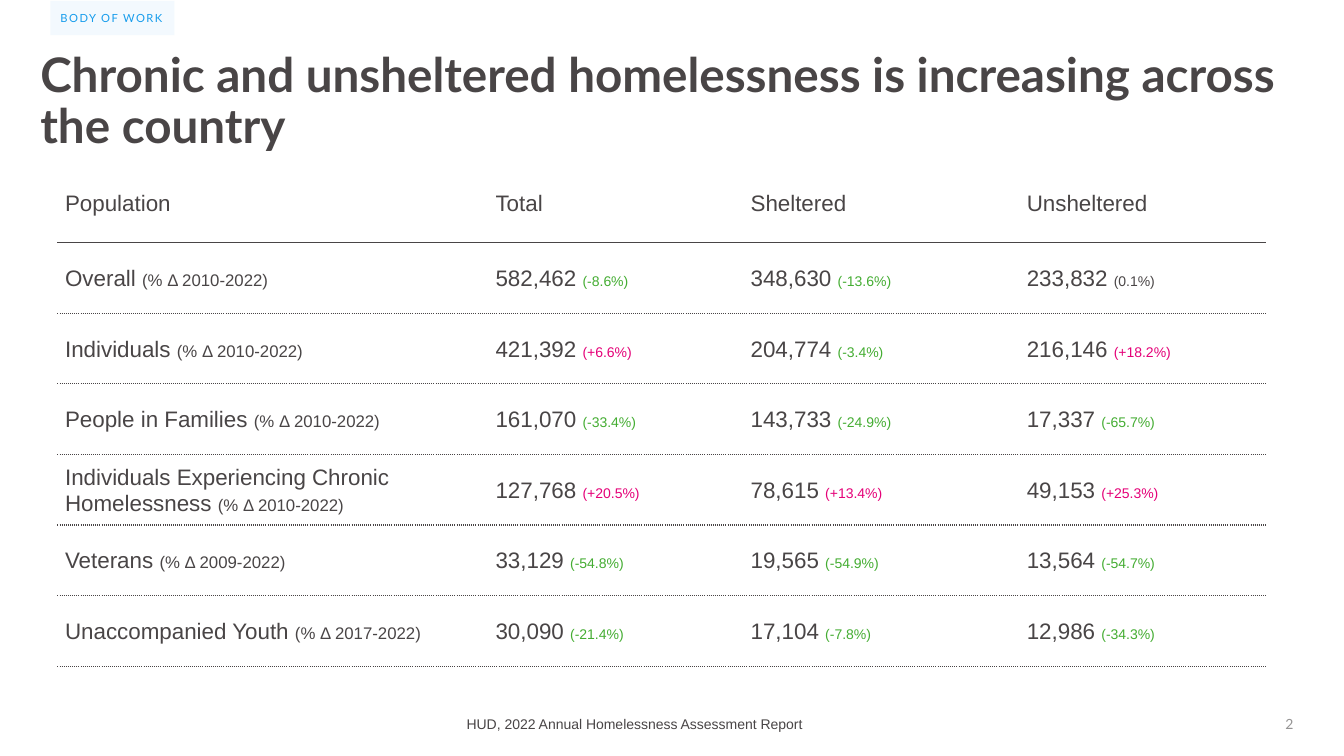
from dataclasses import dataclass
from lxml import etree
from pptx import Presentation, util as u
from pptx.dml.color import RGBColor
from pptx.enum import text as t
from pptx.oxml import ns


@dataclass(frozen=True)
class Theme:
    ink: str = "494546"
    gray: str = "959494"
    blue: str = "169CEC"
    good: str = "44AD32"
    bad: str = "E50178"
    white: str = "FFFFFF"
    head: str = "Lato"
    body: str = "Arial"
    title: int = 34
    cell: int = 16
    note: int = 12
    small: int = 10
    tag: int = 8


def child(node, name, **attrs):
    return etree.SubElement(node, ns.qn(name), attrs)


class Page:
    """Style and current slide; lengths are percent of the slide's size."""

    def __init__(self, deck, theme):
        self.wide, self.high = deck.slide_width, deck.slide_height
        self.theme = theme
        self.slide = deck.slides.add_slide(deck.slide_layouts[1])

    def x(self, share):
        return u.Emu(round(self.wide * share / 100))

    def y(self, share):
        return u.Emu(round(self.high * share / 100))

    def box(self, left, top, width, height):
        return self.x(left), self.y(top), self.x(width), self.y(height)

    def place(self, shape, area):
        shape.left, shape.top, shape.width, shape.height = self.box(*area)
        shape.text_frame.auto_size = t.MSO_AUTO_SIZE.NONE

    def inset(self, frame, side, edge):
        frame.margin_left = frame.margin_right = u.Inches(side)
        frame.margin_top = frame.margin_bottom = u.Inches(edge)

    def style(self, font, size, color, name):
        font.size, font.name = u.Pt(size), name
        font.color.rgb = RGBColor.from_string(color)

    def title(self, words, area):
        shape = self.slide.shapes.title
        self.place(shape, area)
        frame = shape.text_frame
        frame.text = words
        frame.vertical_anchor = t.MSO_ANCHOR.TOP
        self.inset(frame, 0, 0.05)
        para = frame.paragraphs[0]
        para.alignment, para.line_spacing = t.PP_ALIGN.LEFT, 0.9
        self.style(para.font, self.theme.title, self.theme.ink, self.theme.head)
        para.font.bold = True

    def tag(self, words, area):
        shape = self.slide.placeholders[1]
        self.place(shape, area)
        shape.fill.solid()
        shape.fill.fore_color.rgb = RGBColor.from_string(self.theme.blue)
        tint = shape.fill._xPr.find(".//" + ns.qn("a:srgbClr"))
        child(tint, "a:alpha", val="5000")
        frame = shape.text_frame
        frame.text, frame.word_wrap = words, False
        frame.vertical_anchor = t.MSO_ANCHOR.MIDDLE
        self.inset(frame, 0.1, 0.1)
        para = frame.paragraphs[0]
        para.space_before, para.space_after = u.Pt(0), u.Pt(16)
        props = para._p.get_or_add_pPr()
        props.set("marL", "0")
        props.set("indent", "0")
        child(props, "a:buNone")
        self.style(para.font, self.theme.tag, self.theme.blue, self.theme.head)
        para.runs[0]._r.get_or_add_rPr().set("spc", "100")

    def label(self, words, area, color, name, align, inset, wrap=True):
        frame = self.slide.shapes.add_textbox(*self.box(*area)).text_frame
        frame.text, frame.word_wrap = words, wrap
        frame.vertical_anchor = t.MSO_ANCHOR.MIDDLE
        self.inset(frame, *inset)
        para = frame.paragraphs[0]
        para.alignment = align
        self.style(para.font, self.theme.small, color, name)

    def border(self, cell, side, color, dash="solid"):
        line = child(cell._tc.get_or_add_tcPr(), "a:ln" + side, w="12700")
        child(child(line, "a:solidFill"), "a:srgbClr", val=color)
        child(line, "a:prstDash", val=dash)

    def cell(self, cell, row, main, note, size, color):
        ink, white = self.theme.ink, self.theme.white
        # Borders: solid under the header, dotted below
        self.border(cell, "L", white)
        self.border(cell, "R", white)
        self.border(cell, "T", ink if row else white,
                    "sysDot" if row > 1 else "solid")
        self.border(cell, "B", ink, "sysDot" if row else "solid")
        cell.fill.solid()
        cell.fill.fore_color.rgb = RGBColor.from_string(white)
        cell.vertical_anchor = t.MSO_ANCHOR.MIDDLE
        self.inset(cell, 0.07, 0)
        para = cell.text_frame.paragraphs[0]
        para.line_spacing = 1.07
        self.style(para.font, self.theme.cell, ink, self.theme.body)
        para.add_run().text = main + (" " if note else "")
        if note:
            run = para.add_run()
            run.text = f"({note})"
            run.font.size = u.Pt(size)
            run.font.color.rgb = RGBColor.from_string(color)

    def tone(self, change):
        if change.startswith("-"):
            return self.theme.good
        return self.theme.bad if change.startswith("+") else self.theme.ink

    def table(self, rows, area, cols, head):
        grid = self.slide.shapes.add_table(
            len(rows), len(cols), *self.box(*area)).table
        grid.first_row = grid.horz_banding = False
        for col, share in zip(grid.columns, cols):
            col.width = self.x(share)
        step = (area[3] - head) / (len(rows) - 1)
        for i, row in enumerate(rows):
            grid.rows[i].height = self.y(step if i else head)
            for j, item in enumerate(row):
                main, _, note = item.partition("|")
                size = self.theme.small if j else self.theme.note
                color = self.tone(note) if j else self.theme.ink
                self.cell(grid.cell(i, j), i, main, note, size, color)


# Each cell: main text | change or period
COUNTS = [
    ("Population", "Total", "Sheltered", "Unsheltered"),
    ("Overall|% Δ 2010-2022",
     "582,462|-8.6%", "348,630|-13.6%", "233,832|0.1%"),
    ("Individuals|% Δ 2010-2022",
     "421,392|+6.6%", "204,774|-3.4%", "216,146|+18.2%"),
    ("People in Families|% Δ 2010-2022",
     "161,070|-33.4%", "143,733|-24.9%", "17,337|-65.7%"),
    ("Individuals Experiencing Chronic Homelessness|% Δ 2010-2022",
     "127,768|+20.5%", "78,615|+13.4%", "49,153|+25.3%"),
    ("Veterans|% Δ 2009-2022",
     "33,129|-54.8%", "19,565|-54.9%", "13,564|-54.7%"),
    ("Unaccompanied Youth|% Δ 2017-2022",
     "30,090|-21.4%", "17,104|-7.8%", "12,986|-34.3%"),
]


def main():
    deck = Presentation()
    deck.slide_width, deck.slide_height = u.Inches(13.33), u.Inches(7.5)
    theme = Theme()
    page = Page(deck, theme)

    # Heading
    page.title("Chronic and unsheltered homelessness is increasing "
               "across the country", (3, 6.13, 92.5, 16.93))
    page.tag("BODY OF WORK", (3.75, 0.13, 9.23, 4.53))

    # Counts by population
    page.table(COUNTS, (4.32, 21.7, 89.86, 66.45),
               (32.03, 18.98, 20.55, 18.3), 10.4)

    # Footer
    page.label("2", (73.74, 94.27, 22.5, 3.07), theme.gray, theme.head,
               t.PP_ALIGN.RIGHT, (0, 0))
    page.label("HUD, 2022 Annual Homelessness Assessment Report",
               (33.98, 94, 26.86, 3.6), theme.ink, theme.body,
               t.PP_ALIGN.LEFT, (0.1, 0.05), wrap=False)

    deck.save("out.pptx")


if __name__ == "__main__":
    main()
